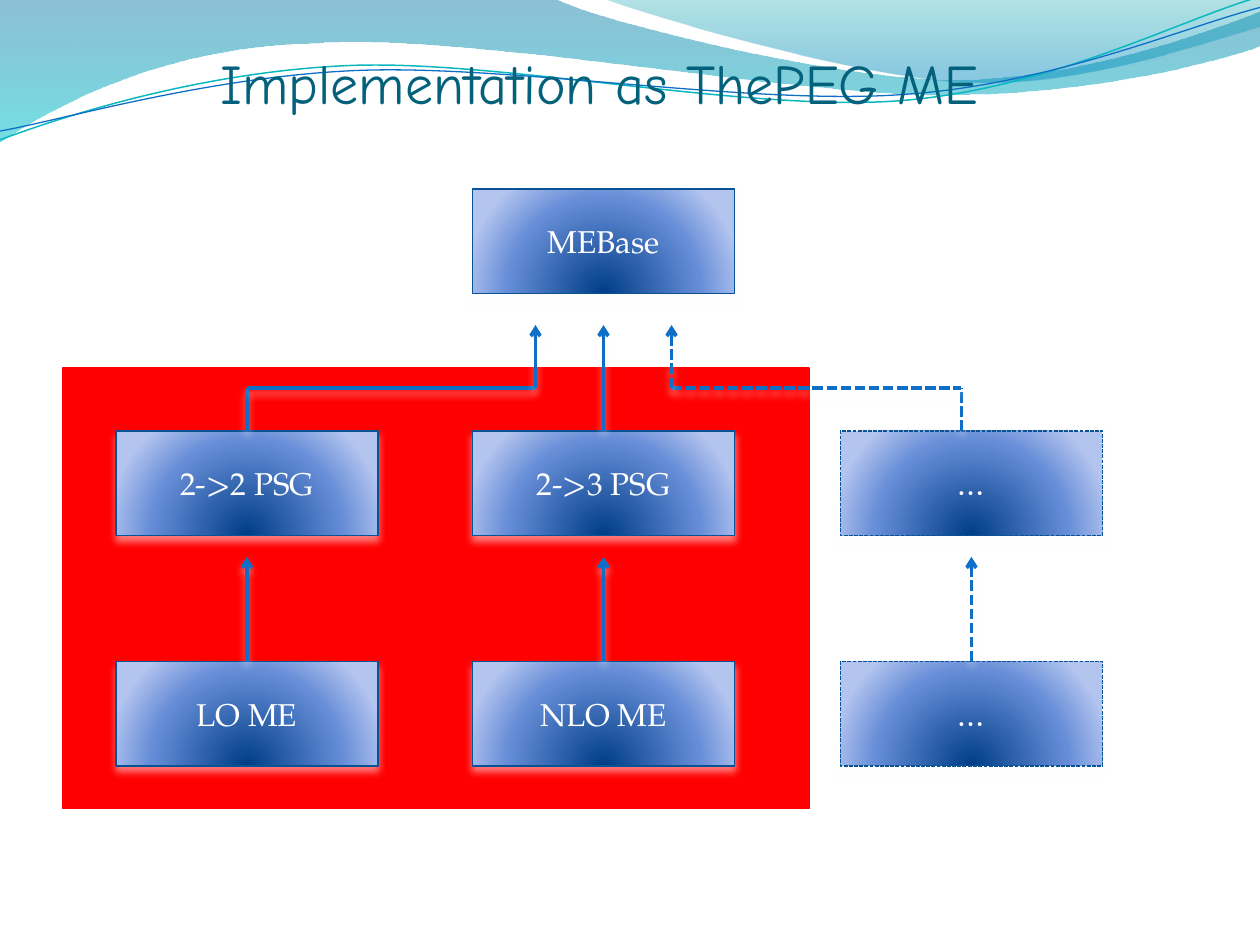
import math

import pptx
import pptx.util
import pptx.oxml
import pptx.oxml.ns
import pptx.dml.color
import pptx.enum.dml
import pptx.enum.shapes
import pptx.enum.text

Inches = pptx.util.Inches
Pt = pptx.util.Pt
RGBColor = pptx.dml.color.RGBColor
SQUARE_DASH = pptx.enum.dml.MSO_LINE.SQUARE_DOT
NS = pptx.oxml.ns.nsdecls("a")
qn = pptx.oxml.ns.qn

RED = RGBColor(0xFF, 0x00, 0x00)
WHITE = RGBColor(0xFF, 0xFF, 0xFF)
TITLE_TEAL = RGBColor(0x04, 0x61, 0x7B)
ARROW_BLUE = RGBColor(0x0F, 0x6F, 0xC6)
CURVE_TEAL = RGBColor(0x0A, 0xB8, 0xBF)
BOX_EDGE = RGBColor(0x09, 0x52, 0x95)
BOX_STOPS = [(0, RGBColor(0x00, 0x3D, 0x87), 100), (68, RGBColor(0x66, 0x8D, 0xD7), 100),
             (100, RGBColor(0xB3, 0xC4, 0xEF), 100)]
LEFT_WAVE_STOPS = [(0, RGBColor(0x00, 0x74, 0xA1), 45), (100, RGBColor(0x00, 0xC6, 0xCF), 55)]
RIGHT_WAVE_STOPS = [(0, RGBColor(0x00, 0xA1, 0xA9), 30), (80, RGBColor(0x00, 0x8B, 0xBF), 45)]

DOWNWARD = '<a:lin ang="5400000" scaled="0"/>'
FROM_BELOW = ('<a:path path="circle"><a:fillToRect l="50000" t="130000" '
              'r="50000" b="-30000"/></a:path>')

# Each wave: start point, then points (2 numbers) and Bezier curves (6 numbers)
LEFT_WAVE = [(0, 0), (4.4, -0.01), (4.76, 0.17, 6.64, 0.63, 7.58, 0.63),
             (8.53, 0.63, 9.58, 0.26, 10, 0.09), (10.01, 0.36),
             (9.83, 0.44, 8.7, 0.76, 7.46, 0.75), (6.22, 0.75, 3.82, 0.28, 2.57, 0.34),
             (1.29, 0.36, 0.46, 0.83, -0.01, 1.13), (0, 0)]
RIGHT_WAVE = [(4.79, -0.01), (5.09, 0.11, 6.82, 0.62, 7.69, 0.65),
              (8.56, 0.69, 9.61, 0.32, 10, 0.21), (10, 0), (4.79, -0.01)]
TEAL_CURVE = [(0, 1.11), (0.48, 0.93, 1.58, 0.57, 2.77, 0.52),
              (3.95, 0.47, 5.93, 0.89, 7.13, 0.8), (8.33, 0.71, 9.38, 0.15, 9.98, -0.02)]
BLUE_CURVE = [(0, 1.04), (0.47, 0.96, 1.64, 0.61, 2.83, 0.56),
              (4.03, 0.51, 5.97, 0.84, 7.17, 0.75), (8.36, 0.67, 9.41, 0.21, 10, 0.06)]
CURVE_TILT = -2.7


def set_values(target, values):
    for name, value in values.items():
        setattr(target, name, value)


def set_gradient(shape, stops, direction):
    shape.fill.background()
    stop_xml = "".join(
        f'<a:gs pos="{pos * 1000}"><a:srgbClr val="{color}">'
        f'<a:alpha val="{alpha * 1000}"/></a:srgbClr></a:gs>' for pos, color, alpha in stops)
    gradient = pptx.oxml.parse_xml(
        f'<a:gradFill {NS} rotWithShape="1"><a:gsLst>{stop_xml}</a:gsLst>{direction}</a:gradFill>')
    properties = shape._element.spPr
    properties.replace(properties.find(qn("a:noFill")), gradient)


def add_glow(part):
    """Soft light shadow, 3 pt below the part."""
    part._element.spPr.append(pptx.oxml.parse_xml(
        f'<a:effectLst {NS}><a:outerShdw blurRad="{Pt(4.5)}" dist="{Pt(3)}" dir="5400000" '
        f'rotWithShape="0"><a:srgbClr val="{WHITE}"><a:alpha val="48000"/></a:srgbClr>'
        f'</a:outerShdw></a:effectLst>'))


def set_line(part, color, width, dashed=False):
    part.line.color.rgb = color
    part.line.width = Pt(width)
    if dashed:
        part.line.dash_style = SQUARE_DASH


def turn(point, pivot, degrees):
    angle = math.radians(degrees)
    x, y = point[0] - pivot[0], point[1] - pivot[1]
    return (pivot[0] + x * math.cos(angle) - y * math.sin(angle),
            pivot[1] + x * math.sin(angle) + y * math.cos(angle))


def add_wave(slide, segments, close, tilt=0, pivot=(0, 0)):
    points = [turn(segment[i:i + 2], pivot, -tilt)
              for segment in segments for i in range(0, len(segment), 2)]
    points = [(Inches(x), Inches(y)) for x, y in points]
    builder = slide.shapes.build_freeform(*points[0])
    builder.add_line_segments(points[1:], close=close)
    wave = builder.convert_to_shape()
    wave.rotation = tilt
    wave.shadow.inherit = False

    # Join each three points of a curve into one Bezier segment
    steps = iter(list(wave._element.iter(qn("a:lnTo"))))
    for segment in segments[1:]:
        step = next(steps)
        if len(segment) == 6:
            curve = pptx.oxml.parse_xml(f"<a:cubicBezTo {NS}/>")
            step.addprevious(curve)
            for control in (step, next(steps), next(steps)):
                curve.append(control[0])
                control.getparent().remove(control)
    return wave


def add_waves(slide):
    for segments, stops in ((LEFT_WAVE, LEFT_WAVE_STOPS), (RIGHT_WAVE, RIGHT_WAVE_STOPS)):
        wave = add_wave(slide, segments, True)
        set_gradient(wave, stops, DOWNWARD)
        wave.line.fill.background()
    for segments, color, width, pivot in ((TEAL_CURVE, CURVE_TEAL, 0.85, (4.99, 0.58)),
                                          (BLUE_CURVE, ARROW_BLUE, 0.75, (5, 0.59))):
        curve = add_wave(slide, segments, False, CURVE_TILT, pivot)
        curve.fill.background()
        set_line(curve, color, width)


def add_rectangle(slide, left, top, width, height):
    return slide.shapes.add_shape(pptx.enum.shapes.MSO_SHAPE.RECTANGLE, Inches(left),
                                  Inches(top), Inches(width), Inches(height))


def add_red_area(slide, left, top, width, height):
    area = add_rectangle(slide, left, top, width, height)
    area.fill.solid()
    area.fill.fore_color.rgb = RED
    set_line(area, RED, 0.75)
    add_glow(area)


def add_title(slide, left, top, width, height):
    title = slide.shapes.title
    set_values(title, {"left": Inches(left), "top": Inches(top),
                       "width": Inches(width), "height": Inches(height)})
    frame = title.text_frame
    frame.text = "Implementation as ThePEG ME"
    set_values(frame, {"margin_left": 0, "margin_right": 0, "margin_top": Inches(0.05),
                       "margin_bottom": 0, "word_wrap": True,
                       "auto_size": pptx.enum.text.MSO_AUTO_SIZE.NONE,
                       "vertical_anchor": pptx.enum.text.MSO_ANCHOR.BOTTOM})
    paragraph = frame.paragraphs[0]
    paragraph.alignment = pptx.enum.text.PP_ALIGN.LEFT
    set_values(paragraph.runs[0].font, {"name": "Comic Neue", "size": Pt(32), "bold": False})
    paragraph.runs[0].font.color.rgb = TITLE_TEAL
    # Bring the title in front of the waves
    slide.shapes._spTree.append(title._element)


def add_class_box(slide, text, left, top, dashed=False):
    box = add_rectangle(slide, left, top, 2.08, 0.83)
    set_gradient(box, BOX_STOPS, FROM_BELOW)
    set_line(box, BOX_EDGE, 0.75, dashed)
    add_glow(box)
    box.text_frame.text = text
    box.text_frame.vertical_anchor = pptx.enum.text.MSO_ANCHOR.MIDDLE
    paragraph = box.text_frame.paragraphs[0]
    paragraph.alignment = pptx.enum.text.PP_ALIGN.CENTER
    set_values(paragraph.runs[0].font, {"name": "TeX Gyre Pagella", "size": Pt(18)})
    paragraph.runs[0].font.color.rgb = WHITE
    return box


def add_link(slide, start, end, dashed=False, arrow=False, box=None):
    link = slide.shapes.add_connector(pptx.enum.shapes.MSO_CONNECTOR.STRAIGHT,
                                      *(Inches(value) for value in (*start, *end)))
    if box is not None:
        link.begin_connect(box, 0)
    set_line(link, ARROW_BLUE, 2, dashed)
    if arrow:
        link.line._get_or_add_ln().append(
            pptx.oxml.parse_xml(f'<a:tailEnd {NS} type="arrow"/>'))
    add_glow(link)


def add_class_diagram(slide, left, top):
    base_tip, bend, psg_top, psg_tip, me_top = (
        top + offset for offset in (1.08, 1.58, 1.92, 2.92, 3.75))
    middle = left + 2.83
    add_class_box(slide, "MEBase", middle, top)
    # Columns: left edge, upper and lower text, dashed
    columns = [(left, "2->2 PSG", "LO ME", False), (middle, "2->3 PSG", "NLO ME", False),
               (left + 5.75, "…", "…", True)]
    psg_boxes = []
    for column, psg, me, dashed in columns:
        center = column + 1.04
        psg_boxes.append(add_class_box(slide, psg, column, psg_top, dashed))
        me_box = add_class_box(slide, me, column, me_top, dashed)
        add_link(slide, (center, me_top), (center, psg_tip), dashed, True, me_box)

    # Middle column goes straight up, the outer ones bend towards the base
    center = middle + 1.04
    add_link(slide, (center, psg_top), (center, base_tip), arrow=True, box=psg_boxes[1])
    for outer, inner, dashed, box in ((left + 1.04, center - 0.54, False, psg_boxes[0]),
                                      (left + 6.71, center + 0.54, True, None)):
        add_link(slide, (outer, psg_top), (outer, bend), dashed, box=box)
        add_link(slide, *sorted([(outer, bend), (inner, bend)]), dashed)
        add_link(slide, (inner, bend), (inner, base_tip), dashed, True)


def main():
    deck = pptx.Presentation()
    deck.slide_width, deck.slide_height = Inches(10), Inches(7.5)
    slide = deck.slides.add_slide(deck.slide_layouts[5])
    add_waves(slide)
    add_red_area(slide, 0.5, 2.92, 5.92, 3.5)
    add_title(slide, 1.75, 0.3, 6.79, 0.62)
    add_class_diagram(slide, 0.92, 1.5)
    deck.save("out.pptx")


if __name__ == "__main__":
    main()
